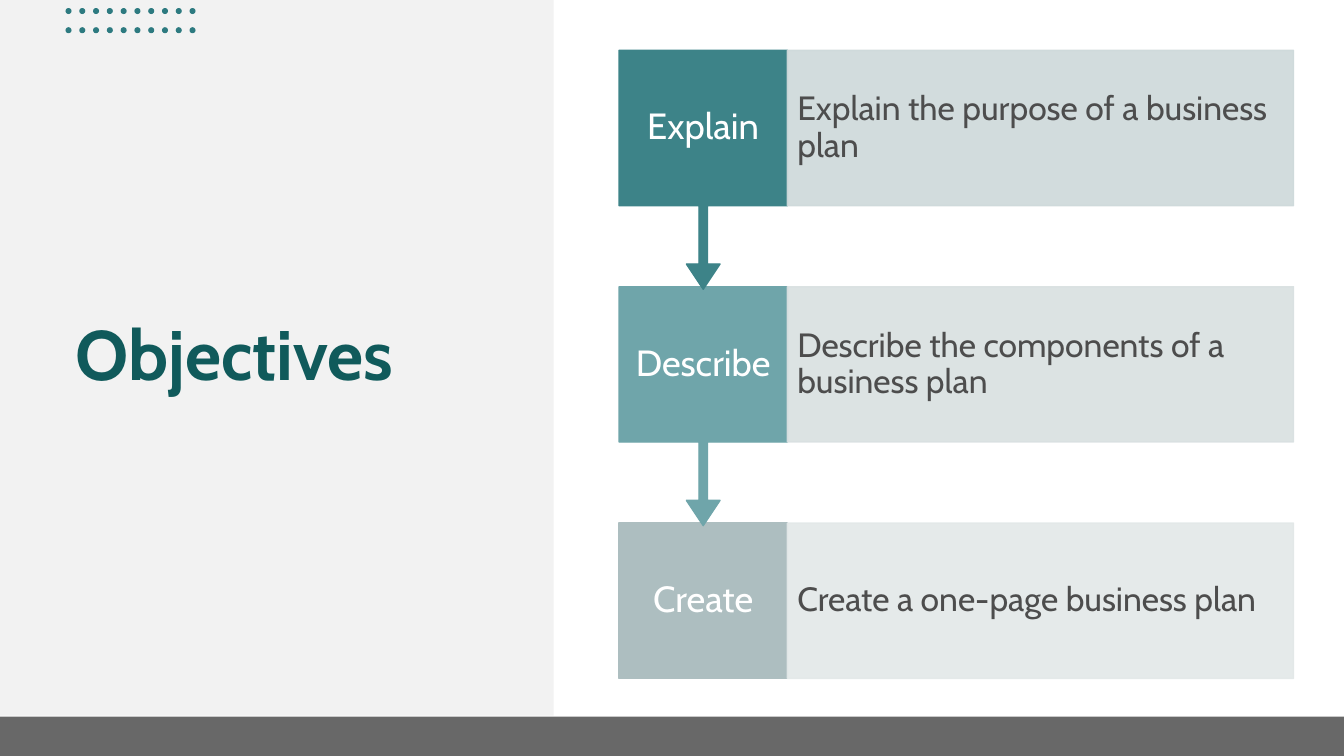
from dataclasses import dataclass

from lxml.etree import SubElement
from pptx import Presentation
from pptx.dml.color import RGBColor
from pptx.enum.shapes import MSO_SHAPE
from pptx.enum.text import MSO_ANCHOR, PP_ALIGN
from pptx.oxml.ns import qn
from pptx.shapes.autoshape import Shape
from pptx.util import Inches, Pt

FONT = "Cabin"
TEAL, DOT_TEAL = "105A5B", "2D7A80"
WHITE, PANEL_GRAY, FOOTER_GRAY, TEXT_GRAY = "FFFFFF", "F2F2F2", "686868", "4D4D4D"

# Steps run down the right side at an equal pitch
STEP_LEFT, STEP_TOP, LAST_STEP_TOP = 6.14, 0.5, 5.19
VERB_WIDTH, GOAL_WIDTH, STEP_HEIGHT, CALLOUT_HEIGHT = 1.67, 5.02, 1.54, 2.37
CALLOUT_ADJUSTMENTS = (0.05, 0.1, 0.15, 0.65)

DOT_ROWS, DOT_COLUMNS, DOT_SIZE = 2, 10, 0.06
DOT_LEFT, LAST_DOT_LEFT, DOT_TOP, DOT_ROW_PITCH = 0.65, 1.88, 0.08, 0.19


@dataclass
class Step:
    verb: str
    goal: str
    verb_color: str
    goal_color: str


@dataclass
class TextStyle:
    size: float
    color: str
    align: PP_ALIGN
    margin_x: float = 0.1
    margin_y: float = 0.05
    bold: bool = False
    line_spacing: float = 0.9


STEPS = [
    Step("Explain", "Explain the purpose of a business plan", "3D8388", "CED9DA"),
    Step("Describe", "Describe the components of a business plan", "6FA5AA", "D9E0E1"),
    Step("Create", "Create a one-page business plan", "ADBEC0", "E3E8E8"),
]
TITLE_STYLE = TextStyle(50, TEAL, PP_ALIGN.LEFT, bold=True)
VERB_STYLE = TextStyle(26, WHITE, PP_ALIGN.CENTER, 0.12, 0.2)
GOAL_STYLE = TextStyle(24, TEXT_GRAY, PP_ALIGN.LEFT, 0.1, 0.33)


def rgb(color: str) -> RGBColor:
    return RGBColor.from_string(color)


def add_filled(shapes, kind: MSO_SHAPE, left: float, top: float, width: float,
               height: float, color: str, outlined: bool = False) -> Shape:
    shape = shapes.add_shape(kind, Inches(left), Inches(top), Inches(width), Inches(height))
    shape.shadow.inherit = False
    shape.fill.solid()
    shape.fill.fore_color.rgb = rgb(color)
    if outlined:
        shape.line.color.rgb = rgb(color)
        shape.line.width = Pt(1)
    else:
        shape.line.fill.background()
    return shape


def set_opacity(shape: Shape, percent: int) -> None:
    for color in shape._element.spPr.iter(qn("a:srgbClr")):
        SubElement(color, qn("a:alpha"), val=str(percent * 1000))


def write(shape: Shape, text: str, style: TextStyle) -> None:
    frame = shape.text_frame
    frame.text = text
    paragraph = frame.paragraphs[0]
    formats = {
        frame: {
            "word_wrap": True,
            "vertical_anchor": MSO_ANCHOR.MIDDLE,
            "margin_left": Inches(style.margin_x),
            "margin_right": Inches(style.margin_x),
            "margin_top": Inches(style.margin_y),
            "margin_bottom": Inches(style.margin_y),
        },
        paragraph: {"alignment": style.align, "line_spacing": style.line_spacing},
        paragraph.runs[0].font: {"name": FONT, "size": Pt(style.size), "bold": style.bold},
    }
    for target, values in formats.items():
        for name, value in values.items():
            setattr(target, name, value)
    paragraph.runs[0].font.color.rgb = rgb(style.color)


def add_dots(shapes) -> None:
    dots = shapes.add_group_shape().shapes
    column_pitch = (LAST_DOT_LEFT - DOT_LEFT) / (DOT_COLUMNS - 1)
    for row in range(DOT_ROWS):
        for column in range(DOT_COLUMNS):
            add_filled(dots, MSO_SHAPE.OVAL, DOT_LEFT + column * column_pitch,
                       DOT_TOP + row * DOT_ROW_PITCH, DOT_SIZE, DOT_SIZE, DOT_TEAL)


def add_steps(shapes) -> None:
    step_shapes = shapes.add_group_shape().shapes
    last = len(STEPS) - 1
    pitch = (LAST_STEP_TOP - STEP_TOP) / last
    # From the bottom up, so that each arrow tip overlaps the step below
    for index, step in reversed(list(enumerate(STEPS))):
        top = STEP_TOP + index * pitch
        if index == last:
            verb = add_filled(step_shapes, MSO_SHAPE.RECTANGLE, STEP_LEFT, top,
                              VERB_WIDTH, STEP_HEIGHT, step.verb_color, True)
        else:
            verb = add_filled(step_shapes, MSO_SHAPE.DOWN_ARROW_CALLOUT, STEP_LEFT, top,
                              VERB_WIDTH, CALLOUT_HEIGHT, step.verb_color, True)
            for position, value in enumerate(CALLOUT_ADJUSTMENTS):
                verb.adjustments[position] = value
        write(verb, step.verb, VERB_STYLE)
        goal = add_filled(step_shapes, MSO_SHAPE.RECTANGLE, STEP_LEFT + VERB_WIDTH, top,
                          GOAL_WIDTH, STEP_HEIGHT, step.goal_color, True)
        set_opacity(goal, 90)
        write(goal, step.goal, GOAL_STYLE)


def main() -> None:
    deck = Presentation()
    deck.slide_width, deck.slide_height = Inches(13.33), Inches(7.5)
    slide = deck.slides.add_slide(deck.slide_layouts[5])
    shapes = slide.shapes

    # Title on the left panel
    title = shapes.title
    title.left, title.top = Inches(0.65), Inches(1.32)
    title.width, title.height = Inches(4.24), Inches(4.45)
    write(title, "Objectives", TITLE_STYLE)
    panel = add_filled(shapes, MSO_SHAPE.RECTANGLE, 0, 0, 5.49, 7.1, PANEL_GRAY)
    title._element.addprevious(panel._element)

    # Decoration and footer band
    add_dots(shapes)
    add_filled(shapes, MSO_SHAPE.RECTANGLE, 0, 7.11, 13.33, 0.39, FOOTER_GRAY)

    # Objectives
    add_steps(shapes)
    deck.save("out.pptx")


if __name__ == "__main__":
    main()
